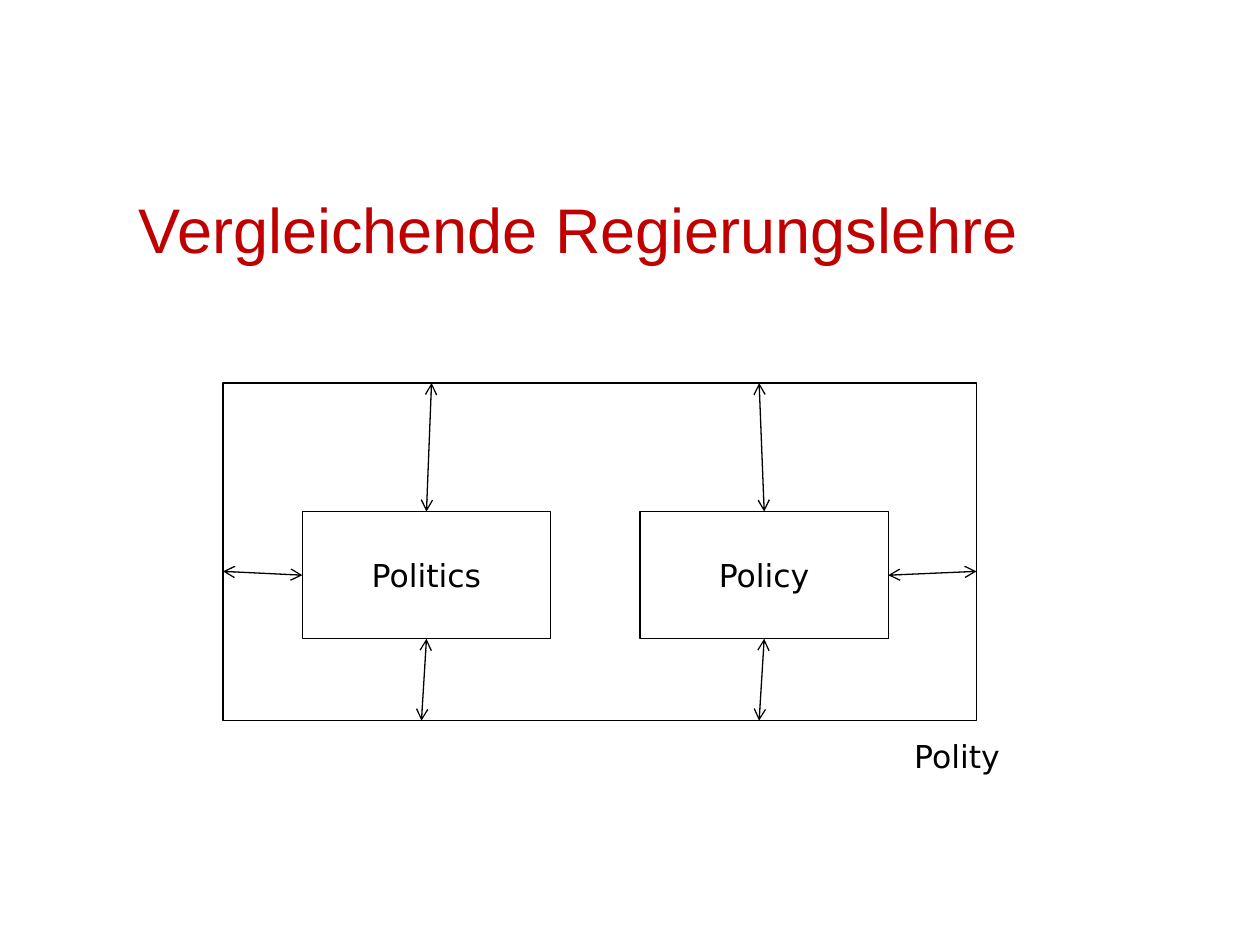
"""Build a slide showing politics and policy framed by polity."""
import lxml.etree
import pptx
import pptx.dml.color
import pptx.enum.shapes
import pptx.enum.text
import pptx.oxml.ns
import pptx.util

Inches = pptx.util.Inches
Pt = pptx.util.Pt
COLORS = {"title": "C00000", "ink": "000000"}
FRAME = (1.77, 3.04, 5.98, 2.68)
BOX_TOP, BOX_WIDTH, BOX_HEIGHT = 4.06, 1.97, 1.01
BOX_LEFTS = {"Policy": 5.08, "Politics": 2.4}


def rgb(name):
    return pptx.dml.color.RGBColor.from_string(COLORS[name])


def write(shape, text, font, size, color, align):
    shape.text_frame.word_wrap = True
    paragraph = shape.text_frame.paragraphs[0]
    paragraph.text = text
    paragraph.alignment = align
    paragraph.font.name = font
    paragraph.font.size = Pt(size)
    paragraph.font.color.rgb = rgb(color)


def write_label(shape, text):
    write(shape, text, "DejaVu Sans", 18, "ink", pptx.enum.text.PP_ALIGN.CENTER)


def set_title(slide, text):
    title = slide.shapes.title
    title.left, title.top = Inches(1), Inches(0.91)
    title.width, title.height = Inches(8), Inches(1.25)
    title.text_frame.vertical_anchor = pptx.enum.text.MSO_ANCHOR.BOTTOM
    write(title, text, "Arial", 36, "title", pptx.enum.text.PP_ALIGN.LEFT)


def add_box(slide, bounds, text=None):
    box = slide.shapes.add_shape(
        pptx.enum.shapes.MSO_SHAPE.RECTANGLE, *map(Inches, bounds))
    box.shadow.inherit = False
    box.fill.background()
    box.line.color.rgb = rgb("ink")
    box.line.width = Pt(0.75)
    if text:
        box.text_frame.vertical_anchor = pptx.enum.text.MSO_ANCHOR.MIDDLE
        write_label(box, text)


def add_caption(slide, bounds, text):
    write_label(slide.shapes.add_textbox(*map(Inches, bounds)), text)


def add_double_arrow(slide, start, end):
    arrow = slide.shapes.add_connector(
        pptx.enum.shapes.MSO_CONNECTOR.STRAIGHT, *map(Inches, start + end))
    arrow.line.color.rgb = rgb("ink")
    arrow.line.width = Pt(0.75)
    properties = arrow._element.spPr
    outline = arrow.line._get_or_add_ln()
    for tag in ("a:headEnd", "a:tailEnd"):
        lxml.etree.SubElement(outline, pptx.oxml.ns.qn(tag), type="arrow")
    lxml.etree.SubElement(properties, pptx.oxml.ns.qn("a:effectLst"))


def add_box_arrows(slide, box_left, top_shift, is_left):
    frame_left, frame_top, frame_width, frame_height = FRAME
    center = box_left + BOX_WIDTH / 2
    middle = BOX_TOP + BOX_HEIGHT / 2
    box_side = box_left if is_left else box_left + BOX_WIDTH
    frame_side = frame_left if is_left else frame_left + frame_width
    add_double_arrow(slide, (center, BOX_TOP), (center + top_shift, frame_top))
    add_double_arrow(slide, (center, BOX_TOP + BOX_HEIGHT),
                     (center - 0.04, frame_top + frame_height))
    add_double_arrow(slide, (box_side, middle), (frame_side, middle - 0.03))


def main():
    deck = pptx.Presentation()
    deck.slide_width, deck.slide_height = Inches(10), Inches(7.5)
    slide = deck.slides.add_slide(deck.slide_layouts[5])
    set_title(slide, "Vergleichende Regierungslehre")
    add_box(slide, FRAME)
    for text, left in BOX_LEFTS.items():
        add_box(slide, (left, BOX_TOP, BOX_WIDTH, BOX_HEIGHT), text)
    add_caption(slide, (6.65, 5.8, 1.89, 0.4), "Polity")
    add_box_arrows(slide, BOX_LEFTS["Politics"], 0.04, True)
    add_box_arrows(slide, BOX_LEFTS["Policy"], -0.04, False)
    deck.save("out.pptx")


if __name__ == "__main__":
    main()
